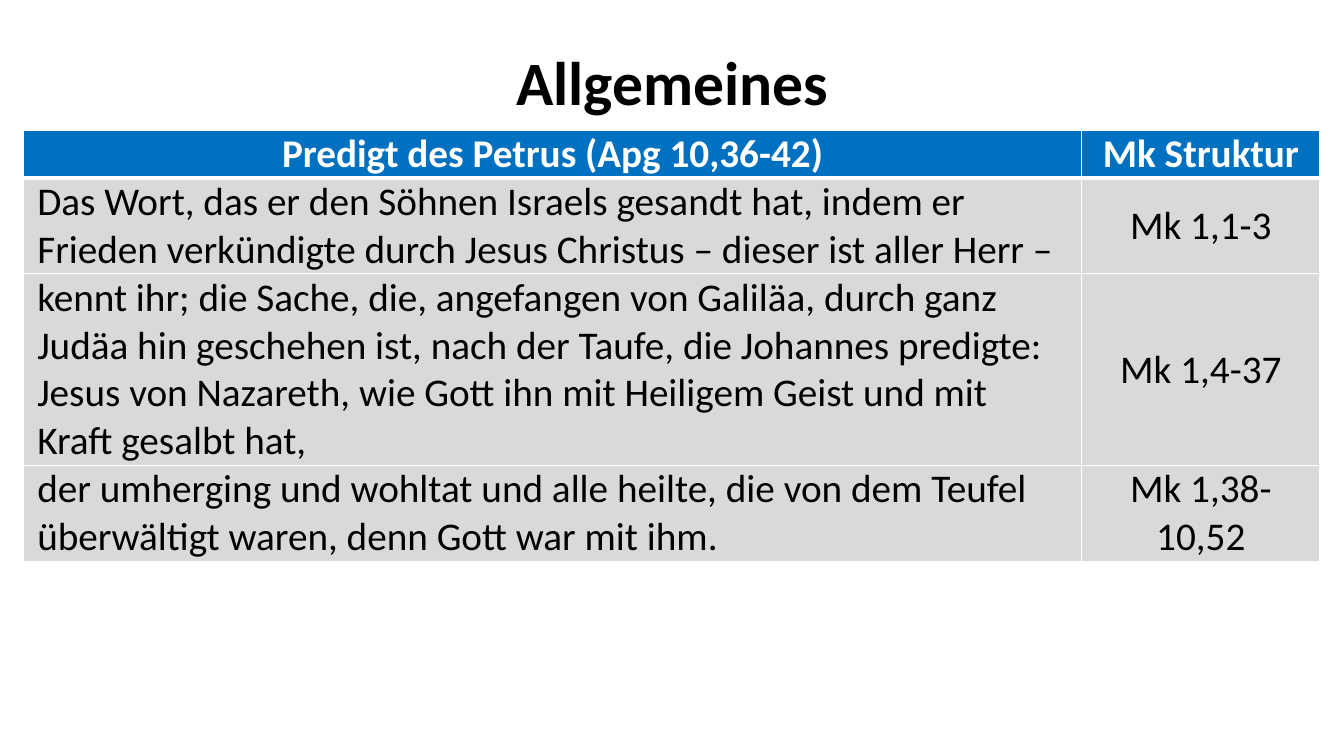
from pptx import Presentation
from pptx.dml.color import RGBColor
from pptx.enum.text import MSO_ANCHOR, MSO_AUTO_SIZE, PP_ALIGN
from pptx.oxml import parse_xml
from pptx.oxml.ns import nsdecls
from pptx.util import Inches, Pt

BLACK = RGBColor(0x00, 0x00, 0x00)
WHITE = RGBColor(0xFF, 0xFF, 0xFF)
BLUE = RGBColor(0x00, 0x70, 0xC0)
GREY = RGBColor(0xD9, 0xD9, 0xD9)

SERMON_ROWS = [
    ("Predigt des Petrus (Apg 10,36-42)", "Mk Struktur"),
    ("Das Wort, das er den Söhnen Israels gesandt hat, indem er Frieden verkündigte "
     "durch Jesus Christus – dieser ist aller Herr –", "Mk 1,1-3"),
    ("kennt ihr; die Sache, die, angefangen von Galiläa, durch ganz Judäa hin "
     "geschehen ist, nach der Taufe, die Johannes predigte: Jesus von Nazareth, "
     "wie Gott ihn mit Heiligem Geist und mit Kraft gesalbt hat,", "Mk 1,4-37"),
    ("der umherging und wohltat und alle heilte, die von dem Teufel überwältigt "
     "waren, denn Gott war mit ihm.", "Mk 1,38-10,52"),
]


class SlideBuilder:
    """Holds the shared style and the current slide."""

    font_name = "Calibri"

    def __init__(self, deck):
        self.page = deck.slides.add_slide(deck.slide_layouts[5])

    def fill_text(self, frame, text, size, color, bold, align):
        frame.text = text
        para = frame.paragraphs[0]
        para.alignment = align
        span = para.runs[0]
        style = {"name": self.font_name, "size": Pt(size), "bold": bold}
        for name, value in style.items():
            setattr(span.font, name, value)
        span.font.color.rgb = color
        return para

    def title(self, text, left, top, width, height):
        box = self.page.shapes.title
        place = {"left": left, "top": top, "width": width, "height": height}
        for name, value in place.items():
            setattr(box, name, Inches(value))
        layout = {"word_wrap": True, "auto_size": MSO_AUTO_SIZE.NONE,
                  "vertical_anchor": MSO_ANCHOR.MIDDLE}
        for name, value in layout.items():
            setattr(box.text_frame, name, value)
        para = self.fill_text(box.text_frame, text, 44, BLACK, True, PP_ALIGN.CENTER)
        para.line_spacing = 0.9

    def border(self, cell, side, width):
        properties = cell._tc.get_or_add_tcPr()
        properties.append(parse_xml(
            f'<a:ln{side} {nsdecls("a")} w="{Pt(width)}"><a:solidFill>'
            f'<a:srgbClr val="{WHITE}"/></a:solidFill></a:ln{side}>'))

    def cell(self, cell, text, row, column):
        header = row == 0
        layout = {"margin_left": Inches(0.14), "margin_right": Inches(0.14),
                  "margin_top": 0, "margin_bottom": 0,
                  "vertical_anchor": MSO_ANCHOR.MIDDLE}
        for name, value in layout.items():
            setattr(cell, name, value)
        widths = {"L": 1, "R": 1, "T": 3 if row == 1 else 1, "B": 3 if header else 1}
        for side, width in widths.items():
            self.border(cell, side, width)
        cell.fill.solid()
        cell.fill.fore_color.rgb = BLUE if header else GREY
        centred = header or column == 1
        self.fill_text(cell.text_frame, text, 28, WHITE if header else BLACK, header,
                       PP_ALIGN.CENTER if centred else PP_ALIGN.LEFT)

    def table(self, rows, left, top, height, column_widths, row_heights):
        frame = self.page.shapes.add_table(
            len(rows), len(column_widths), Inches(left), Inches(top),
            Inches(sum(column_widths)), Inches(height))
        table = frame.table
        for column, width in zip(table.columns, column_widths):
            column.width = Inches(width)
        for row, row_height in zip(table.rows, row_heights):
            row.height = Inches(row_height)
        frame.height = Inches(height)
        for row, texts in enumerate(rows):
            for column, text in enumerate(texts):
                self.cell(table.cell(row, column), text, row, column)


def main():
    deck = Presentation()
    deck.slide_width = Inches(13.33)
    deck.slide_height = Inches(7.5)
    builder = SlideBuilder(deck)
    builder.title("Allgemeines", 0.92, 0.4, 11.5, 0.89)
    builder.table(SERMON_ROWS, 0.23, 1.29, 4.21, [10.5, 2.36], [0.47] + [0.69] * 3)
    deck.save("out.pptx")


if __name__ == "__main__":
    main()
